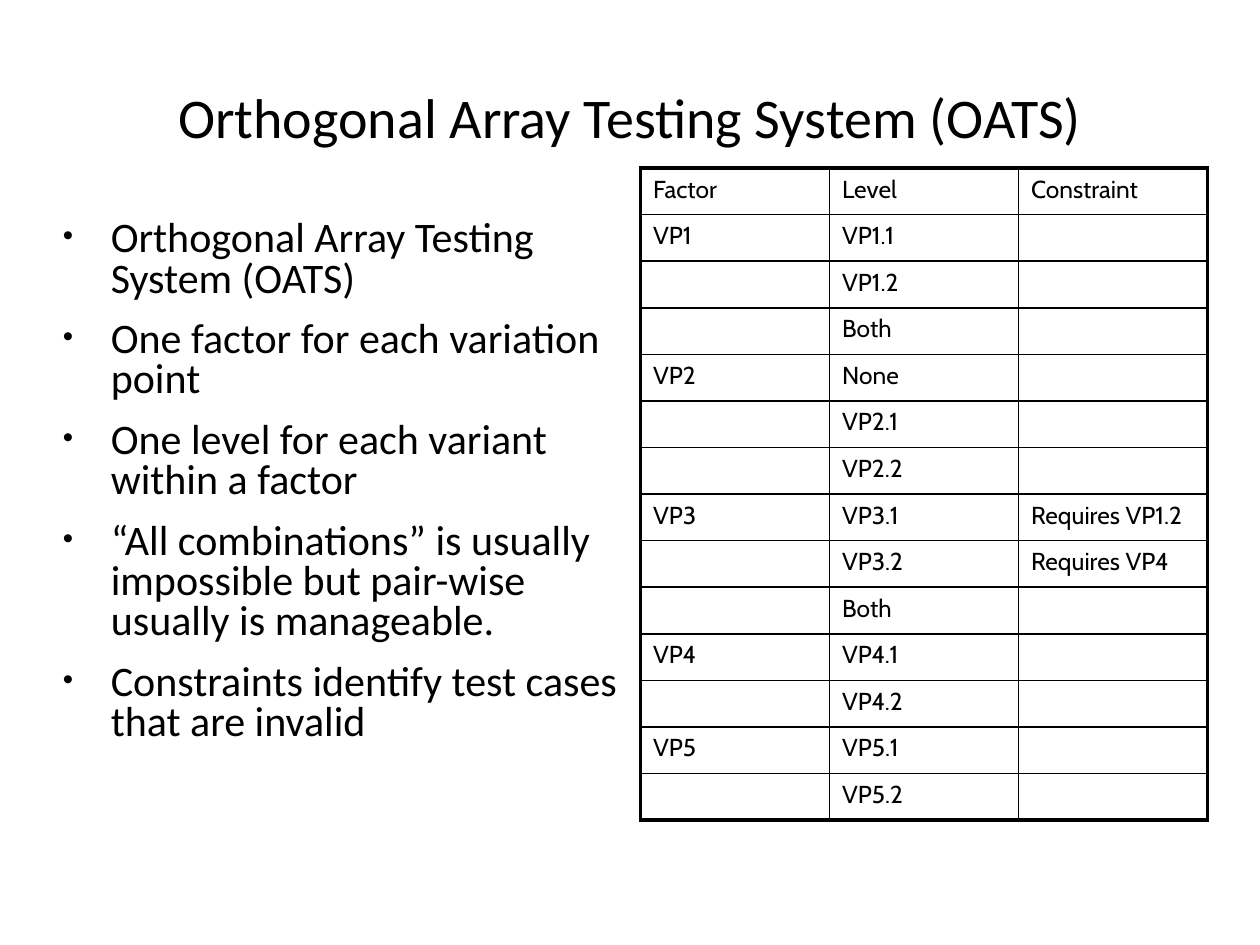
"""Build the slide on orthogonal array testing with its factor table."""
from lxml import etree
from pptx import Presentation
from pptx import util as u
from pptx.dml.color import RGBColor
from pptx.enum import text
from pptx.oxml.ns import qn

COLORS = {"ink": "000000", "paper": "FFFFFF"}
ideas = [
    "Orthogonal Array Testing System (OATS)",
    "One factor for each variation point",
    "One level for each variant within a factor",
    "“All combinations” is usually impossible but pair-wise usually is manageable.",
    "Constraints identify test cases that are invalid",
]
factors = [
    ("Factor", "Level", "Constraint"),
    ("VP1", "VP1.1", ""),
    ("", "VP1.2", ""),
    ("", "Both", ""),
    ("VP2", "None", ""),
    ("", "VP2.1", ""),
    ("", "VP2.2", ""),
    ("VP3", "VP3.1", "Requires VP1.2"),
    ("", "VP3.2", "Requires VP4"),
    ("", "Both", ""),
    ("VP4", "VP4.1", ""),
    ("", "VP4.2", ""),
    ("VP5", "VP5.1", ""),
    ("", "VP5.2", ""),
]


def write(paragraph, words, size, face="Calibri", align=text.PP_ALIGN.LEFT, bullet=None):
    paragraph.alignment = align
    if bullet:
        props = paragraph._p.get_or_add_pPr()
        props.set("marL", str(u.Inches(0.38)))
        props.set("indent", str(-u.Inches(0.38)))
        etree.SubElement(props, qn("a:buSzPct"), val="70000")
        etree.SubElement(props, qn("a:buFont"), typeface="Arial")
        etree.SubElement(props, qn("a:buChar"), char=bullet)
    if not words:
        etree.SubElement(paragraph._p, qn("a:endParaRPr"), sz=str(size * 100))
        return
    run = paragraph.add_run()
    run.text = words
    run.font.size = u.Pt(size)
    run.font.name = face
    run.font.color.rgb = RGBColor.from_string(COLORS["ink"])


deck = Presentation()
deck.slide_width, deck.slide_height = u.Inches(10), u.Inches(7.5)
col, row = deck.slide_width / 120, deck.slide_height / 90
slide = deck.slides.add_slide(deck.slide_layouts[5])
slide.background.fill.solid()
slide.background.fill.fore_color.rgb = RGBColor.from_string(COLORS["paper"])

heading = slide.shapes.title
heading.left, heading.top = int(6 * col), int(3.6 * row)
heading.width, heading.height = int(108 * col), int(15 * row)
heading.text_frame.vertical_anchor = text.MSO_ANCHOR.MIDDLE
write(heading.text_frame.paragraphs[0], "Orthogonal Array Testing System (OATS)", 32,
      align=text.PP_ALIGN.CENTER)

summary = slide.shapes.add_textbox(
    int(6 * col), int(21 * row), int(53 * col), int(54 * row)).text_frame
summary.word_wrap = True
summary.margin_left = summary.margin_right = summary.margin_top = summary.margin_bottom = 0
for i, idea in enumerate(ideas):
    point = summary.add_paragraph() if i else summary.paragraphs[0]
    point.line_spacing = 0.8
    point.space_after = u.Pt(11.5)
    write(point, idea, 24, bullet="•")

last_row, last_col = len(factors) - 1, len(factors[0]) - 1
grid = slide.shapes.add_table(
    len(factors), len(factors[0]), int(61 * col), int(16 * row),
    int(54 * col), int(4.44 * row) * len(factors)).table
grid.first_row = grid.horz_banding = False
for r, entries in enumerate(factors):
    for c, entry in enumerate(entries):
        cell = grid.cell(r, c)
        cell.fill.background()
        write(cell.text_frame.paragraphs[0], entry, 14, face="Cabin")
        outer = {"L": c == 0, "R": c == last_col, "T": r == 0, "B": r == last_row}
        for i, (side, is_outer) in enumerate(outer.items()):
            border = etree.Element(qn(f"a:ln{side}"), w=str(u.Pt(2.25 if is_outer else 1)))
            paint = etree.SubElement(border, qn("a:solidFill"))
            etree.SubElement(paint, qn("a:srgbClr"), val=COLORS["ink"])
            cell._tc.get_or_add_tcPr().insert(i, border)

deck.save("out.pptx")
